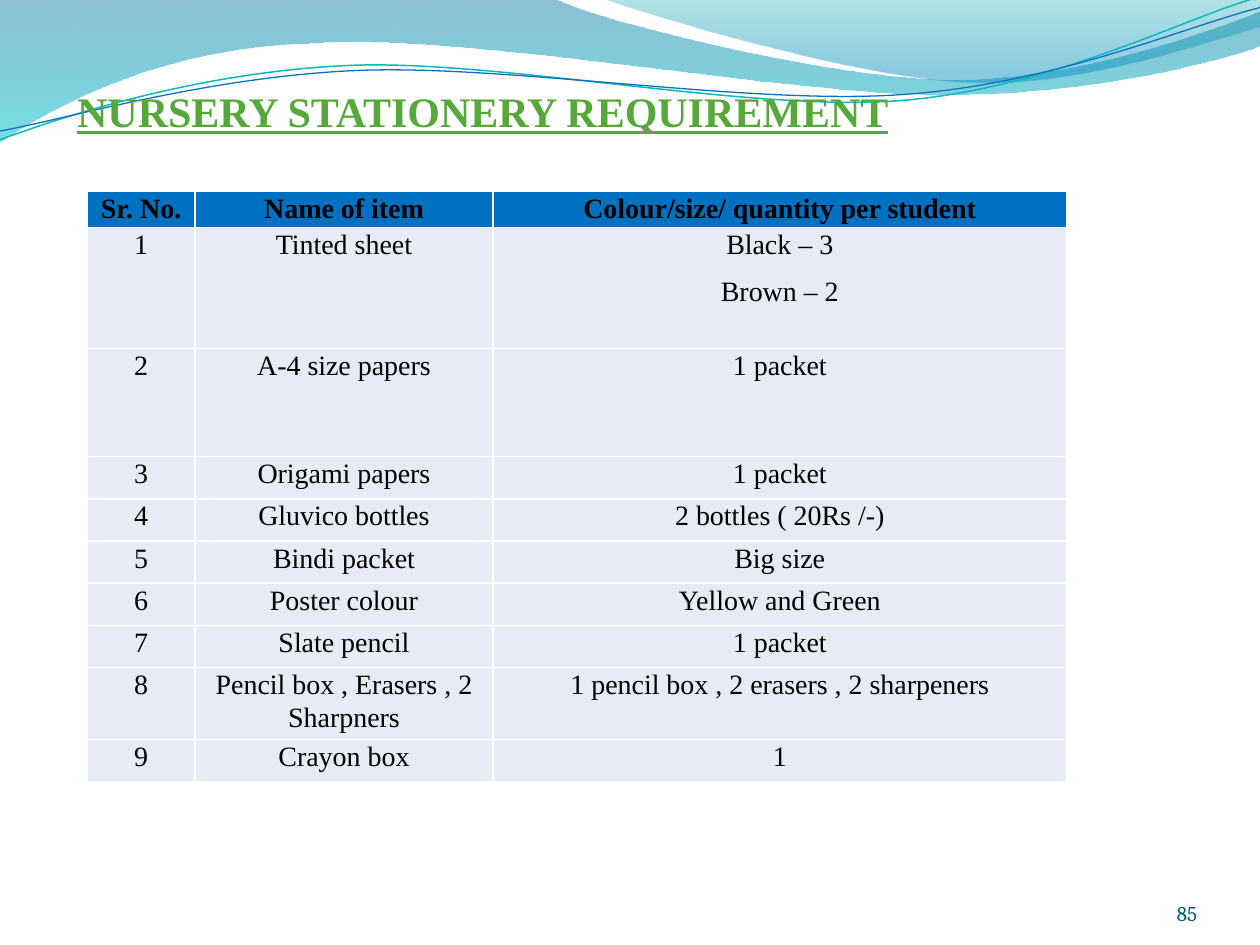
"""Build the nursery stationery requirement slide with its wave header and table."""
from lxml import etree
from pptx import Presentation
from pptx.dml.color import RGBColor
from pptx.enum.text import MSO_ANCHOR, PP_ALIGN
from pptx.oxml.ns import qn
from pptx.util import Cm, Pt

LEFT, CENTER, RIGHT = PP_ALIGN.LEFT, PP_ALIGN.CENTER, PP_ALIGN.RIGHT
TOP, BOTTOM = MSO_ANCHOR.TOP, MSO_ANCHOR.BOTTOM
BLACK = RGBColor(0x00, 0x00, 0x00)
GREEN = RGBColor(0x55, 0xA8, 0x39)
NAVY = RGBColor(0x04, 0x5D, 0x75)
HEADER_BLUE = RGBColor(0x00, 0x70, 0xC0)
PALE_BLUE = RGBColor(0xE7, 0xEB, 0xF5)
DEEP_TEAL = RGBColor(0x00, 0x74, 0xA1)
AQUA = RGBColor(0x00, 0xC6, 0xCF)
SEA = RGBColor(0x00, 0xA1, 0xA9)
SKY = RGBColor(0x00, 0x8B, 0xBF)
LINE_TEAL = RGBColor(0x0A, 0xB8, 0xBF)
LINE_BLUE = RGBColor(0x0F, 0x6F, 0xC6)
SERIF = "Times New Roman"
CM_PER_INCH = 2.54
FIRST_WAVE_ID = 101

TITLE = "NURSERY STATIONERY REQUIREMENT"
PAGE_NUMBER = "85"
ROWS = [
    ("Sr. No.", "Name of item", "Colour/size/ quantity per student"),
    ("1", "Tinted sheet", "Black – 3\nBrown – 2"),
    ("2", "A-4 size papers", "1 packet"),
    ("3", "Origami papers", "1 packet"),
    ("4", "Gluvico bottles", "2 bottles ( 20Rs /-)"),
    ("5", "Bindi packet", "Big size"),
    ("6", "Poster colour", "Yellow and Green"),
    ("7", "Slate pencil", "1 packet"),
    ("8", "Pencil box , Erasers , 2 Sharpners", "1 pencil box , 2 erasers , 2 sharpeners"),
    ("9", "Crayon box", "1"),
]
COLUMN_WIDTHS = [2.17, 6.01, 11.56]
ROW_HEIGHT = 0.85
SPECIAL_HEIGHTS = {0: 0.66, 1: 2.44, 2: 2.18, 8: 1.34}

# Wave paths are in inches: two values make a line, six make a Bézier curve.
BANDS = [
    ([(0, 0), (4.4, -0.01), (4.76, 0.17, 6.64, 0.63, 7.58, 0.63),
      (8.53, 0.63, 9.58, 0.26, 10, 0.09), (10.01, 0.36),
      (9.83, 0.44, 8.7, 0.76, 7.46, 0.75), (6.22, 0.75, 3.82, 0.28, 2.57, 0.34),
      (1.29, 0.36, 0.46, 0.83, -0.01, 1.13)],
     [(0, DEEP_TEAL, 45), (1, AQUA, 55)]),
    ([(4.79, -0.01), (5.09, 0.11, 6.82, 0.62, 7.69, 0.65),
      (8.56, 0.69, 9.61, 0.32, 10, 0.21), (10, 0)],
     [(0, SEA, 30), (0.8, SKY, 45)]),
]
STRANDS = [
    ([(0, 1.11), (0.48, 0.93, 1.58, 0.57, 2.77, 0.52),
      (3.95, 0.47, 5.93, 0.89, 7.13, 0.8), (8.33, 0.71, 9.38, 0.15, 9.98, -0.02)],
     LINE_TEAL, 0.85),
    ([(0, 1.04), (0.47, 0.96, 1.64, 0.61, 2.83, 0.56),
      (4.03, 0.51, 5.97, 0.84, 7.17, 0.75), (8.36, 0.67, 9.41, 0.21, 10, 0.06)],
     LINE_BLUE, 0.75),
]


def bend_segments(wave, segments):
    outline = wave.element.find(".//" + qn("a:path"))
    strokes = iter(outline.findall(qn("a:lnTo")))
    for segment in segments:
        group = [next(strokes) for _ in range(len(segment) // 2)]
        if len(group) == 3:
            curve = etree.SubElement(outline, qn("a:cubicBezTo"))
            group[0].addprevious(curve)
            for stroke in group:
                curve.append(stroke[0])
                outline.remove(stroke)


def add_wave(page, path, closed):
    values = [Cm(value * CM_PER_INCH) for segment in path for value in segment]
    start, *rest = zip(values[0::2], values[1::2])
    builder = page.shapes.build_freeform(*start)
    builder.add_line_segments(rest, close=closed)
    wave = builder.convert_to_shape()
    wave.shadow.inherit = False
    bend_segments(wave, path[1:])
    return wave


def add_band(page, path, stops):
    band = add_wave(page, path, True)
    band.line.fill.background()
    band.fill.gradient()
    band.fill.gradient_angle = 270
    for stop, (position, color, _) in zip(band.fill.gradient_stops, stops):
        stop.position = position
        stop.color.rgb = color
    gradient = band.element.find(".//" + qn("a:gradFill"))
    for tone, (_, _, opacity) in zip(gradient.iter(qn("a:srgbClr")), stops):
        etree.SubElement(tone, qn("a:alpha"), val=str(opacity * 1000))
    return band


def add_strand(page, path, color, width):
    strand = add_wave(page, path, False)
    strand.fill.background()
    strand.line.color.rgb = color
    strand.line.width = Pt(width)
    return strand


def add_header_waves(page):
    waves = [add_band(page, *band) for band in BANDS]
    waves += [add_strand(page, *strand) for strand in STRANDS]
    for number, wave in enumerate(waves, FIRST_WAVE_ID):
        wave.element.find(".//" + qn("p:cNvPr")).set("id", str(number))
        page.slide_layout.shapes.element.append(wave.element)


def style(font, size, color, name, bold=False):
    font.size = Pt(size)
    font.name = name
    font.bold = bold
    font.color.rgb = color


def add_borders(cell):
    properties = cell._tc.get_or_add_tcPr()
    for side in ("lnL", "lnR", "lnT", "lnB"):
        border = etree.SubElement(properties, qn("a:" + side), w=str(Pt(1)))
        fill = etree.SubElement(border, qn("a:solidFill"))
        etree.SubElement(fill, qn("a:srgbClr"), val="FFFFFF")


def fill_cell(cell, text, is_header):
    add_borders(cell)
    cell.fill.solid()
    cell.fill.fore_color.rgb = HEADER_BLUE if is_header else PALE_BLUE
    cell.margin_left = cell.margin_right = Cm(0.18)
    cell.margin_top = cell.margin_bottom = 0
    cell.text = text
    for para in cell.text_frame.paragraphs:
        para.alignment = CENTER
        para.line_spacing = 1.07
        para.space_after = Pt(8)
        for span in para.runs:
            style(span.font, 16, BLACK, SERIF, is_header)


def add_item_table(page):
    heights = [SPECIAL_HEIGHTS.get(i, ROW_HEIGHT) for i in range(len(ROWS))]
    table = page.shapes.add_table(
        len(ROWS), len(COLUMN_WIDTHS), Cm(1.76), Cm(3.86),
        Cm(sum(COLUMN_WIDTHS)), Cm(sum(heights))).table
    for column, width in zip(table.columns, COLUMN_WIDTHS):
        column.width = Cm(width)
    for i, (row, height, texts) in enumerate(zip(table.rows, heights, ROWS)):
        row.height = Cm(height)
        for cell, text in zip(row.cells, texts):
            fill_cell(cell, text, i == 0)


def place_title(page):
    title = page.shapes.title
    title.left, title.top, title.width, title.height = Cm(0.03), Cm(1.55), Cm(18.77), Cm(2.06)
    frame = title.text_frame
    frame.text = TITLE
    frame.vertical_anchor = TOP
    frame.margin_top = Cm(0.18)
    frame.word_wrap = True
    para = frame.paragraphs[0]
    para.alignment = LEFT
    style(para.font, 24, GREEN, SERIF, True)
    para.font.underline = True
    para._p.get_or_add_pPr().set("indent", str(Cm(1.27)))
    page.shapes.element.append(title.element)


def add_page_number(page):
    frame = page.shapes.add_textbox(Cm(22.02), Cm(17.65), Cm(2.11), Cm(1.02)).text_frame
    frame.word_wrap = True
    frame.vertical_anchor = BOTTOM
    frame.margin_left = frame.margin_right = frame.margin_top = frame.margin_bottom = 0
    frame.text = PAGE_NUMBER
    para = frame.paragraphs[0]
    para.alignment = RIGHT
    style(para.font, 12, NAVY, "Cambria")


def main():
    deck = Presentation()
    deck.slide_width, deck.slide_height = Cm(25.4), Cm(19.05)
    page = deck.slides.add_slide(deck.slide_layouts[5])
    add_header_waves(page)
    add_page_number(page)
    add_item_table(page)
    place_title(page)
    deck.save("out.pptx")


if __name__ == "__main__":
    main()
